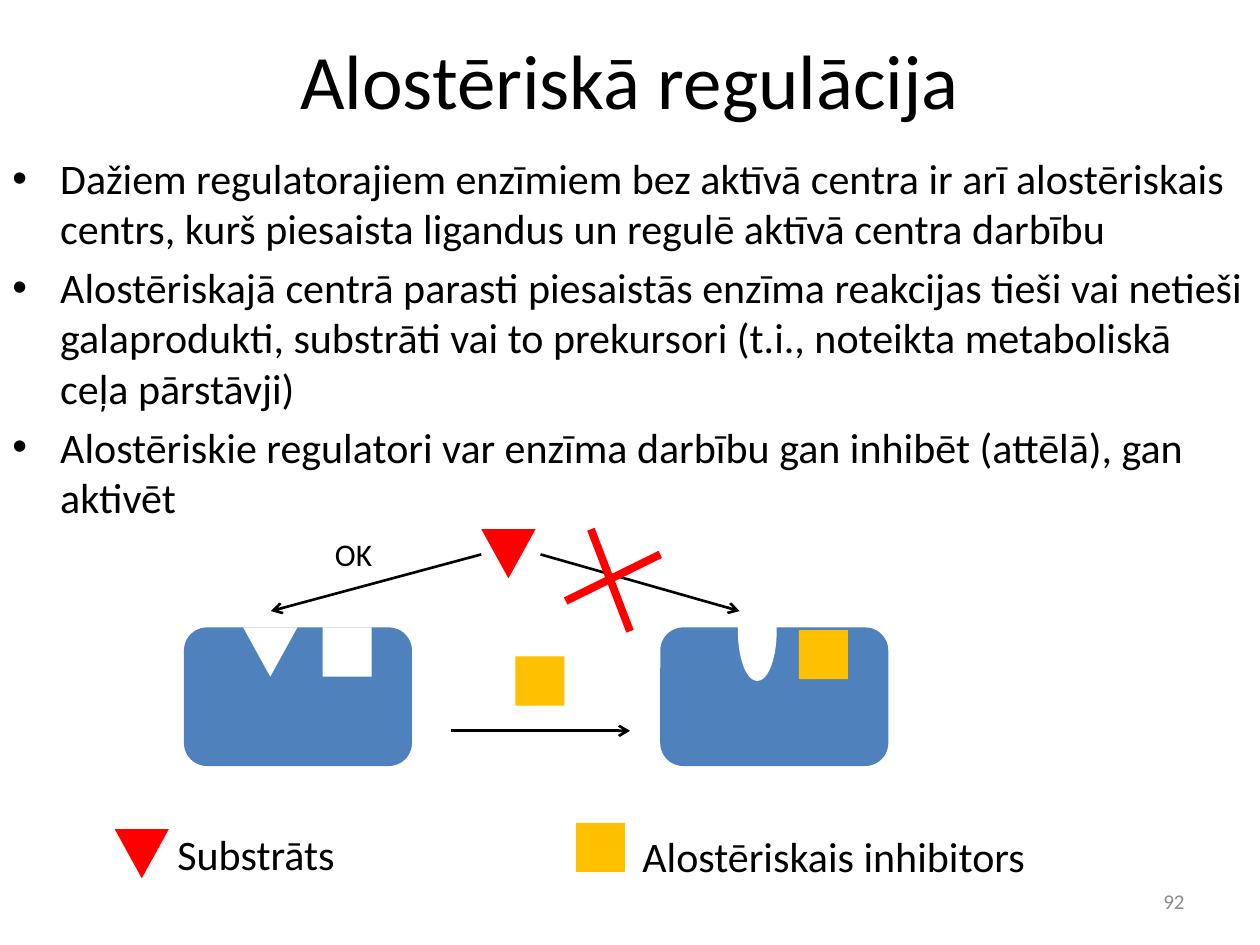
from lxml import etree
from pptx import Presentation
from pptx.dml.color import RGBColor
from pptx.enum.shapes import MSO_CONNECTOR, MSO_SHAPE
from pptx.enum.text import MSO_ANCHOR, PP_ALIGN
from pptx.oxml.ns import qn
from pptx.util import Inches, Pt

LINE = MSO_CONNECTOR.STRAIGHT
RECT = MSO_SHAPE.RECTANGLE
ROUND = MSO_SHAPE.ROUNDED_RECTANGLE
WEDGE = MSO_SHAPE.ISOSCELES_TRIANGLE
OVAL = MSO_SHAPE.OVAL
TOP, MIDDLE = MSO_ANCHOR.TOP, MSO_ANCHOR.MIDDLE
LEFT, CENTER, RIGHT = PP_ALIGN.LEFT, PP_ALIGN.CENTER, PP_ALIGN.RIGHT

COLORS = {"black": "000000", "white": "FFFFFF", "blue": "4F81BD",
          "red": "FF0000", "gold": "FFC000", "gray": "8C8C8C"}
POINTS = [
    "Dažiem regulatorajiem enzīmiem bez aktīvā centra ir arī alostēriskais "
    "centrs, kurš piesaista ligandus un regulē aktīvā centra darbību",
    "Alostēriskajā centrā parasti piesaistās enzīma reakcijas tieši vai "
    "netieši galaprodukti, substrāti vai to prekursori (t.i., noteikta "
    "metaboliskā ceļa pārstāvji)",
    "Alostēriskie regulatori var enzīma darbību gan inhibēt (attēlā), gan "
    "aktivēt",
]


def tint(name):
    return RGBColor.from_string(COLORS[name])


def apply(target, values):
    for key, value in values.items():
        setattr(target, key, value)


class Canvas:
    def __init__(self, slide, font):
        self.slide = slide
        self.font = font

    def text(self, box, lines, size, color="black", align=LEFT, anchor=TOP,
             bullet=False):
        item = self.slide.shapes.add_textbox(*map(Inches, box))
        frame = item.text_frame
        apply(frame, {"word_wrap": True, "vertical_anchor": anchor})
        for i, line in enumerate(lines):
            para = frame.paragraphs[0] if i == 0 else frame.add_paragraph()
            para.text = line
            para.alignment = align
            if bullet:
                self.bullet(para)
                para.space_before = Pt(0.2 * size if i else 0)
            apply(para.font, {"name": self.font, "size": Pt(size)})
            para.font.color.rgb = tint(color)

    def bullet(self, para):
        props = para._p.get_or_add_pPr()
        props.set("marL", str(Inches(0.38)))
        props.set("indent", str(-Inches(0.38)))
        etree.SubElement(props, qn("a:buFont")).set("typeface", "Arial")
        etree.SubElement(props, qn("a:buChar")).set("char", "•")

    def shape(self, kind, box, color, turn=0, edge=0):
        item = self.slide.shapes.add_shape(kind, *map(Inches, box))
        item.shadow.inherit = False
        item.rotation = turn
        item.fill.solid()
        item.fill.fore_color.rgb = tint(color)
        if edge:
            item.line.color.rgb = tint(color)
            item.line.width = Pt(edge)
        else:
            item.line.fill.background()

    def enzyme(self, left):
        self.shape(ROUND, (left, 4.98, 1.81, 1.1), "blue")

    def wedge(self, left, top, color="red"):
        self.shape(WEDGE, (left, top, 0.43, 0.39), color, turn=180)

    def square(self, left, top, color="gold"):
        self.shape(RECT, (left, top, 0.39, 0.39), color)

    def line(self, start, end, color="black", width=1.5, arrow=True):
        item = self.slide.shapes.add_connector(
            LINE, *map(Inches, start + end))
        item.line.color.rgb = tint(color)
        item.line.width = Pt(width)
        if arrow:
            stroke = item.line._get_or_add_ln()
            etree.SubElement(stroke, qn("a:tailEnd")).set("type", "arrow")
        etree.SubElement(item._element.spPr, qn("a:effectLst"))


def main():
    deck = Presentation()
    apply(deck, {"slide_width": Inches(10), "slide_height": Inches(7.5)})
    art = Canvas(deck.slides.add_slide(deck.slide_layouts[6]), "Calibri")

    art.text((0.5, 0, 9, 1.25), ["Alostēriskā regulācija"], 44,
             align=CENTER, anchor=MIDDLE)
    art.text((0, 1.16, 10, 4.95), POINTS, 24, bullet=True)

    art.enzyme(1.46)
    art.wedge(1.93, 4.98, "white")
    art.square(2.56, 4.98, "white")
    art.wedge(3.82, 4.2)
    art.line((3.82, 4.4), (2.15, 4.85))

    art.enzyme(5.24)
    art.square(6.34, 5)
    art.shape(OVAL, (5.87, 4.62, 0.28, 0.77), "white", edge=2)
    art.line((3.58, 5.8), (5, 5.8))
    art.square(4.09, 5.21)
    art.line((4.29, 4.4), (5.87, 4.85))
    for start, end in [((4.69, 4.2), (5, 5.01)), ((4.49, 4.77), (5.24, 4.4))]:
        art.line(start, end, "red", 4.5, arrow=False)
    art.text((2.56, 4.2, 0.71, 0.4), ["OK"], 18)

    art.wedge(0.91, 6.58)
    art.square(4.57, 6.53)
    art.text((1.31, 6.53, 1.81, 0.5), ["Substrāts"], 24)
    art.text((5, 6.54, 3.94, 0.5), ["Alostēriskais inhibitors"], 24)
    art.text((7.17, 6.95, 2.33, 0.4), ["92"], 12, "gray", RIGHT, MIDDLE)

    deck.save("out.pptx")


if __name__ == "__main__":
    main()
